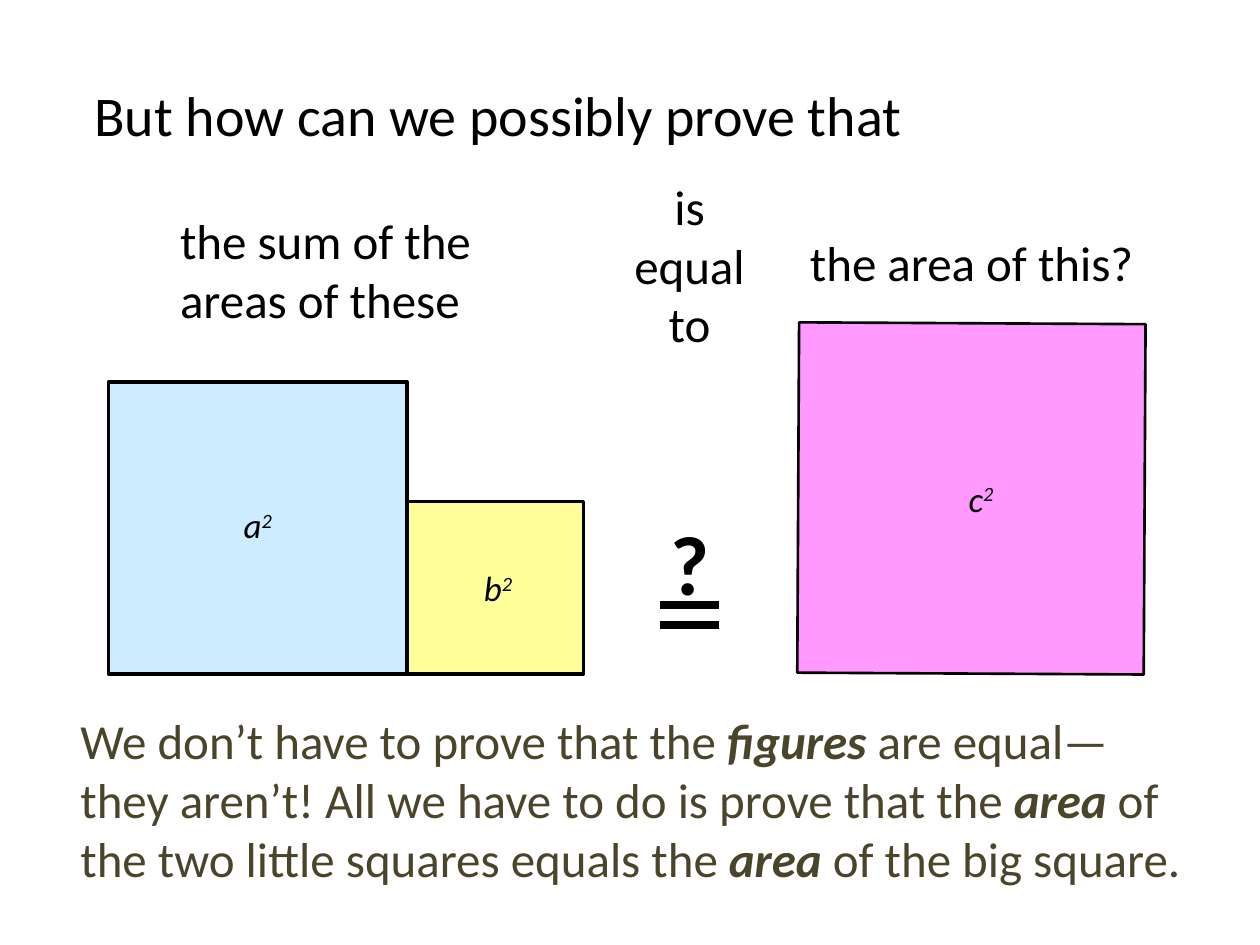
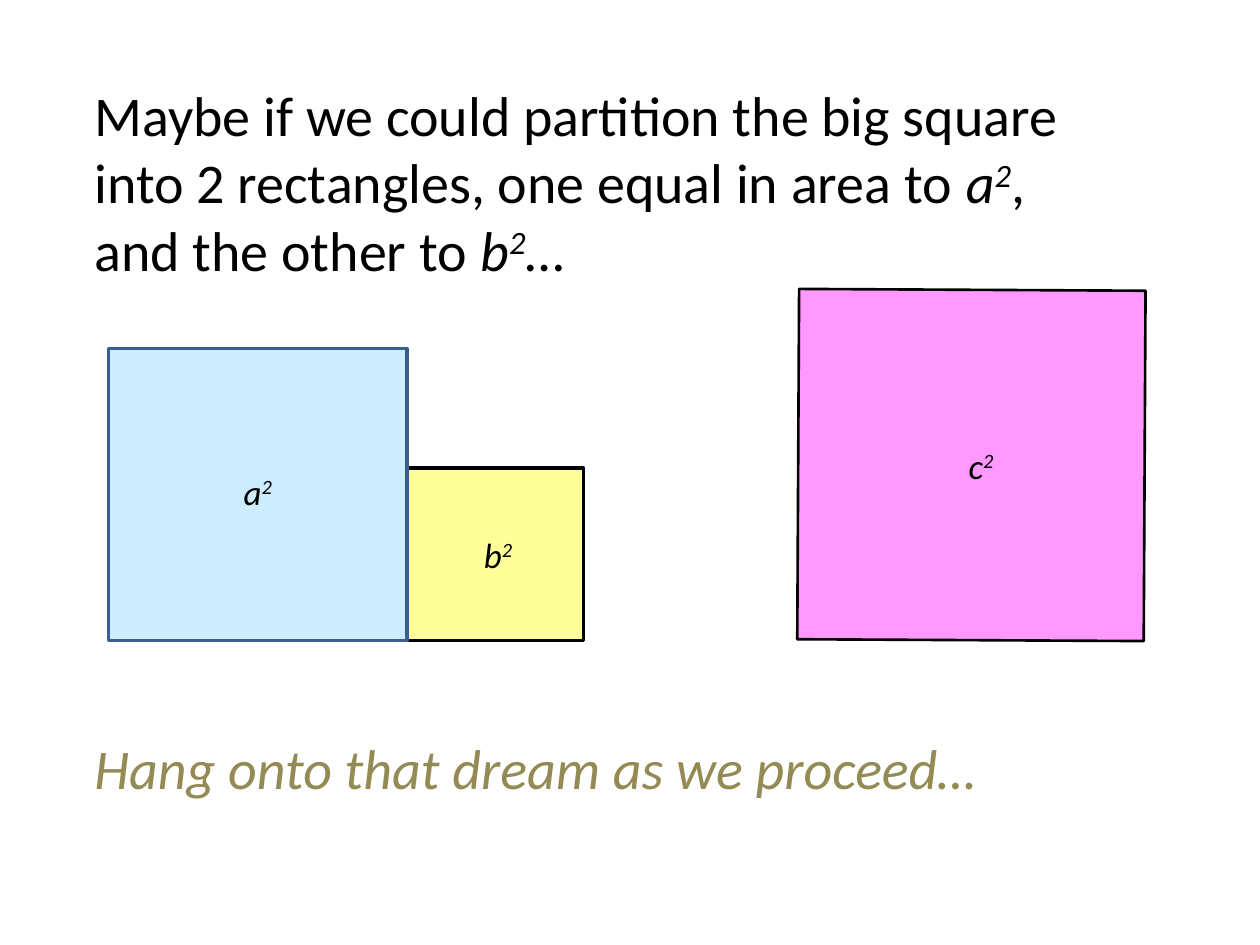
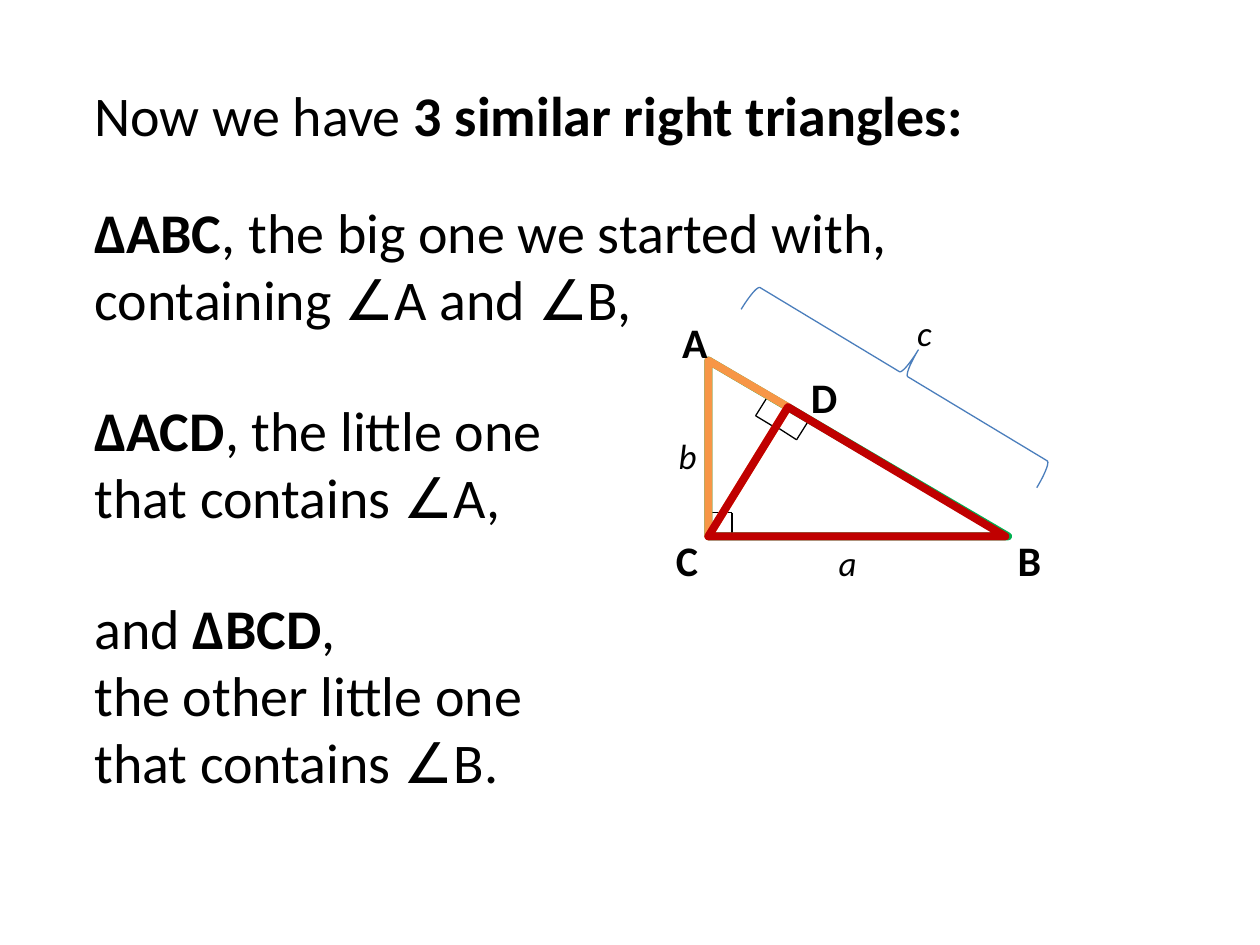
from itertools import pairwise

from lxml.etree import SubElement
from pptx import Presentation
from pptx.dml.color import RGBColor
from pptx.enum.shapes import MSO_CONNECTOR, MSO_SHAPE
from pptx.enum.text import MSO_ANCHOR, MSO_AUTO_SIZE, PP_ALIGN
from pptx.oxml.ns import qn
from pptx.util import Pt

FONT = "Calibri"
BLACK = RGBColor(0x00, 0x00, 0x00)
WHITE = RGBColor(0xFF, 0xFF, 0xFF)
YELLOW = RGBColor(0xFF, 0xFF, 0x99)
SKY = RGBColor(0xCC, 0xEC, 0xFF)
PINK = RGBColor(0xFF, 0x99, 0xFF)
STEEL = RGBColor(0x3A, 0x5F, 0x8C)
BRACE_BLUE = RGBColor(0x4B, 0x7E, 0xBC)
GREEN = RGBColor(0x00, 0xB0, 0x50)
ORANGE = RGBColor(0xF7, 0x96, 0x46)
RED = RGBColor(0xC0, 0x00, 0x00)
OLIVE = RGBColor(0x4A, 0x45, 0x2A)
KHAKI = RGBColor(0x94, 0x8A, 0x54)

MARGIN = 46.8
TEXT_WIDTH = 619.2
TITLE_TOP = 42.5
TITLE_SIZE = 32
BODY_SIZE = 28
SYMBOL_SIZE = 20
LEFT, CENTER = PP_ALIGN.LEFT, PP_ALIGN.CENTER


def squared(letter):
    return [(letter, "i"), ("2", "i^")]


def write(frame, lines, size, color, align):
    """Fill a frame with lines of (text, style) runs; styles: b bold, i italic, ^ raised."""
    frame.word_wrap = True
    frame.auto_size = MSO_AUTO_SIZE.NONE
    frame.vertical_anchor = MSO_ANCHOR.TOP
    paragraph = frame.paragraphs[0]
    paragraph.alignment = align
    font = paragraph.font
    font.name, font.size, font.color.rgb = FONT, Pt(size), color
    for number, line in enumerate(lines):
        if number:
            paragraph.add_line_break()
        for text, style in line:
            run = paragraph.add_run()
            run.text = text
            if "b" in style:
                run.font.bold = True
            if "i" in style:
                run.font.italic = True
            if "^" in style:
                run.font._element.set("baseline", "30000")


def add_text(slide, box, lines, size, color=BLACK, align=LEFT):
    text_box = slide.shapes.add_textbox(*map(Pt, box))
    write(text_box.text_frame, lines, size, color, align)


def add_titled_slide(presentation, lines, height):
    slide = presentation.slides.add_slide(presentation.slide_layouts[5])
    title = slide.shapes.title
    title.left, title.top = Pt(MARGIN), Pt(TITLE_TOP)
    title.width, title.height = Pt(TEXT_WIDTH), Pt(height)
    write(title.text_frame, lines, TITLE_SIZE, BLACK, LEFT)
    return slide


def style_shape(shape, fill, line, weight):
    shape.shadow.inherit = False
    if fill is None:
        shape.fill.background()
    else:
        shape.fill.solid()
        shape.fill.fore_color.rgb = fill
    shape.line.color.rgb = line
    shape.line.width = Pt(weight)


def add_preset(slide, kind, box, fill, line, weight, rotation=0):
    shape = slide.shapes.add_shape(kind, *map(Pt, box))
    shape.rotation = rotation
    style_shape(shape, fill, line, weight)


def add_polygon(slide, points, fill, line, weight):
    start, *others = [(Pt(x), Pt(y)) for x, y in points]
    builder = slide.shapes.build_freeform(*start)
    builder.add_line_segments(others, close=True)
    style_shape(builder.convert_to_shape(), fill, line, weight)


def add_lines(slide, points, weight):
    """Join successive points with straight black connectors."""
    for start, end in pairwise(points):
        connector = slide.shapes.add_connector(
            MSO_CONNECTOR.STRAIGHT, *map(Pt, (*start, *end)))
        connector.line.color.rgb = BLACK
        connector.line.width = Pt(weight)
        SubElement(connector._element.spPr, qn("a:effectLst"))


def add_squares(slide, left, top, a_outline):
    """Draw the squares on the legs, and the slightly tilted one on the hypotenuse."""
    squares = [
        ("b", (170.6, 100.8, 100.8, 98.6), YELLOW, BLACK, 2, 0, (205, 134.6, 35.3)),
        ("a", (0, 32.4, 170.6, 167), SKY, a_outline, 2, 0, (63.3, 98.6, 44)),
        ("c", (393, 0, 200.2, 198), PINK, BLACK, 1.5, 270.3, (476.6, 83.5, 44)),
    ]
    for letter, (x, y, width, height), fill, line, weight, rotation, label in squares:
        add_preset(slide, MSO_SHAPE.RECTANGLE, (left + x, top + y, width, height),
                   fill, line, weight, rotation)
        label_x, label_y, label_width = label
        add_text(slide, (left + label_x, top + label_y, label_width, 31.7),
                 [squared(letter)], SYMBOL_SIZE, align=CENTER)


def add_questioned_equals(slide, left, top):
    add_text(slide, (left, top, 100, 65.5), [[("?", "b")]], 48, align=CENTER)
    for y in (top + 57, top + 68.5):
        add_lines(slide, [(left + 33, y), (left + 67, y)], 4.5)


def add_similar_triangles(slide, left, top):
    """Draw triangle ABC, split by altitude CD, with A at the given point."""
    def at(*offsets):
        return [(left + x, top + y) for x, y in offsets]

    a, b, c, d = (0, 0), (171.3, 100.5), (0, 100.5), (45.5, 26.6)
    inner_b = (169.8, 100.5)
    add_polygon(slide, at(a, c, b), WHITE, BLACK, 0.75)
    add_lines(slide, at(d, c), 1.5)
    right_angles = [
        [(0, 87), (13.5, 87), (13.5, 100.5)],
        [(39.2, 38.1), (50.4, 45.3), (57.2, 34.5)],
        [(34.2, 20.1), (27, 31.6), (37.8, 38.1)],
    ]
    for corner in right_angles:
        add_lines(slide, at(*corner), 0.75)
    for corners, color in (((a, c, b), GREEN), ((a, c, d), ORANGE),
                           ((inner_b, c, d), RED)):
        add_polygon(slide, at(*corners), None, color, 4.5)
    add_preset(slide, MSO_SHAPE.RIGHT_BRACE, (left + 95.4, top - 90.8, 32.4, 197.3),
               None, BRACE_BLUE, 0.75, 301.1)

    vertices = {"A": (-22, -28.9), "B": (169.6, 95.7), "C": (-25.6, 95.7), "D": (51.5, 2.8)}
    sides = {"a": (67.3, 100), "b": (-24.1, 38.8), "c": (111.2, -31.8)}
    for labels, style, size, height in ((vertices, "b", 24, 16),
                                        (sides, "i", SYMBOL_SIZE, 23)):
        for letter, (x, y) in labels.items():
            add_text(slide, (left + x, top + y, 24.5, height),
                     [[(letter, style)]], size, align=CENTER)


def build_question_slide(presentation):
    slide = add_titled_slide(presentation, [[("But how can we possibly prove that", "")]], 46)
    add_squares(slide, 62, 185.8, BLACK)
    captions = [
        ("is equal to", (344, 97.2, 100, 108.7), CENTER),
        ("the sum of the areas of these", (95.8, 116.6, 209.5, 74.9), LEFT),
        ("the area of this?", (440, 129.6, 230.4, 41), CENTER),
    ]
    for text, box, align in captions:
        add_text(slide, box, [[(text, "")]], BODY_SIZE, align=align)
    add_text(slide, (38.9, 402.5, 651, 108.7), [[
        ("We don’t have to prove that the ", ""), ("figures", "bi"),
        (" are equal—they aren’t! All we have to do is prove that the ", ""),
        ("area", "bi"), (" of the two little squares equals the ", ""),
        ("area", "bi"), (" of the big square.", ""),
    ]], BODY_SIZE, OLIVE)
    add_questioned_equals(slide, 344, 288.7)


def build_dream_slide(presentation):
    slide = add_titled_slide(presentation, [
        [("Maybe if we could partition the big square", "")],
        [("into 2 rectangles, one equal in area to ", ""), *squared("a"), (",", "")],
        [("and the other to ", ""), *squared("b"), ("…", "")],
    ], 123.8)
    add_squares(slide, 62, 166.7, STEEL)
    add_text(slide, (MARGIN, 415.4, TEXT_WIDTH, 46),
             [[("Hang onto that dream as we proceed…", "i")]], TITLE_SIZE, KHAKI)


def build_triangles_slide(presentation):
    slide = add_titled_slide(
        presentation, [[("Now we have ", ""), ("3 similar right triangles:", "b")]], 46)
    add_similar_triangles(slide, 404.8, 206)
    statements = [
        (109.4, 594, 85, [[("ΔABC", "b"), (", the big one we started with,", "")],
                          [("containing ∠A and ∠B,", "")]]),
        (222.5, 296.6, 85, [[("ΔACD", "b"), (", the little one", "")],
                            [("that contains ∠A,", "")]]),
        (335.5, 399.6, 123.8, [[("and ", ""), ("ΔBCD", "b"), (",", "")],
                               [("the other little one", "")],
                               [("that contains ∠B.", "")]]),
    ]
    for top, width, height, lines in statements:
        add_text(slide, (MARGIN, top, width, height), lines, TITLE_SIZE)


def main():
    presentation = Presentation()
    presentation.slide_width, presentation.slide_height = Pt(720), Pt(540)
    build_question_slide(presentation)
    build_dream_slide(presentation)
    build_triangles_slide(presentation)
    presentation.save("out.pptx")


if __name__ == "__main__":
    main()
